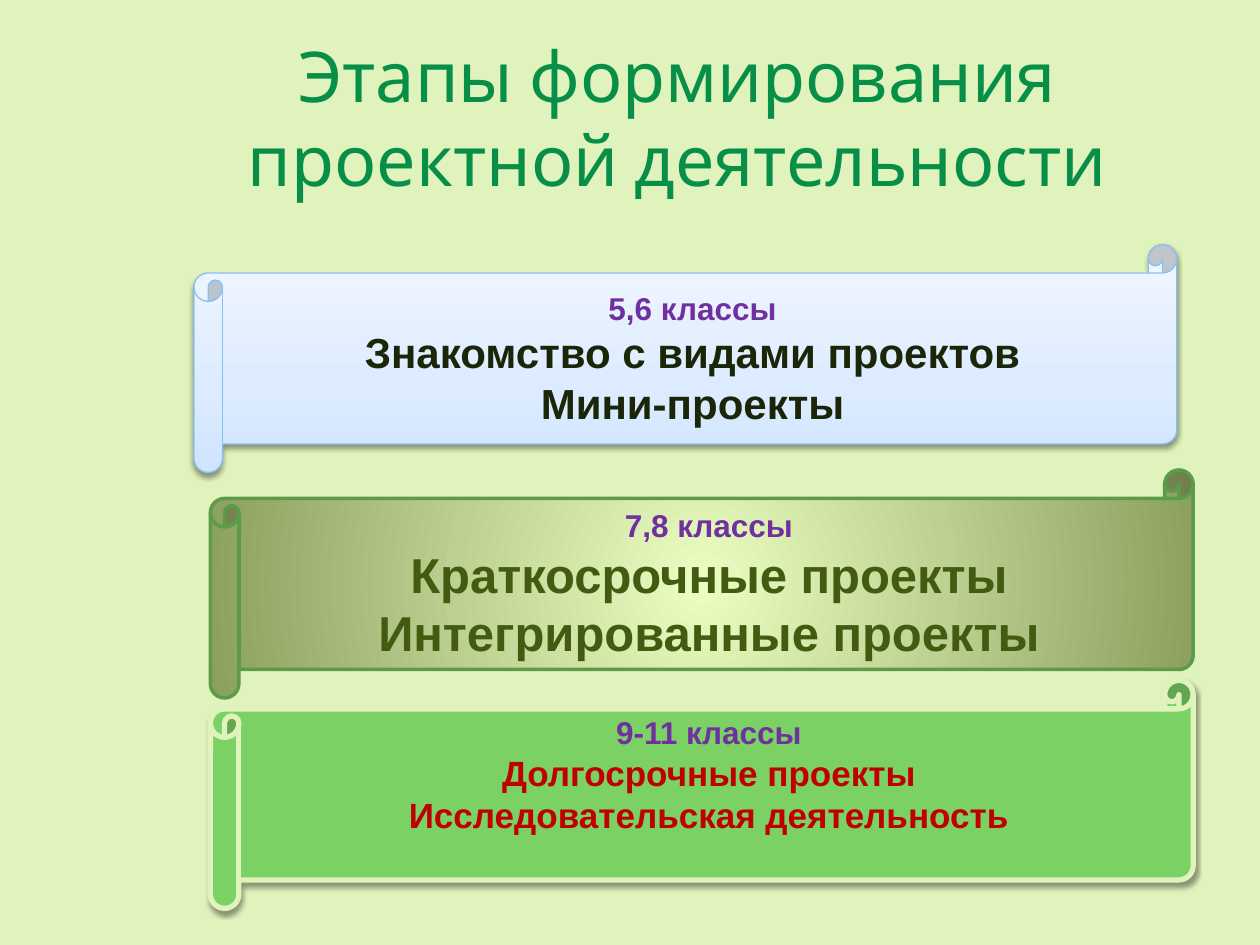
from lxml.etree import SubElement
from pptx import Presentation
from pptx.dml.color import RGBColor
from pptx.enum.shapes import MSO_SHAPE
from pptx.enum.text import MSO_ANCHOR, PP_ALIGN
from pptx.oxml.ns import qn
from pptx.util import Inches, Pt

COLORS = {
    "background": "E1F3BC",
    "title": "078F48",
    "grades": "7030A0",
    "intro": "1B2507",
    "intro_line": "88C0F6",
    "short": "435B10",
    "short_line": "5B9B49",
    "long": "C00000",
    "long_fill": "7BD163",
    "shadow": "000000",
}
BLUE_STOPS = [(0, "CEE4FF"), (35, "DCEBFF"), (100, "F1F7FF")]
OLIVE_STOPS = [(0, "EBFFC2"), (100, "8BA05F")]


class SlideBuilder:
    """Holds the style and the current slide."""

    def __init__(self, page):
        self.page = page
        self.body_font = "Arial"
        self.title_font = "Karla"

    def color(self, name):
        return RGBColor.from_string(COLORS[name])

    def background(self, name):
        fill = self.page.background.fill
        fill.solid()
        fill.fore_color.rgb = self.color(name)

    def set_text(self, paragraph, text, font, size, color, bold=False):
        paragraph.text = text
        paragraph.alignment = PP_ALIGN.CENTER
        for span in paragraph.runs:
            span.font.name = font
            span.font.size = Pt(size)
            span.font.bold = bold
            span.font.color.rgb = self.color(color)

    def title(self, text, left, top, width, height):
        box = self.page.shapes.add_textbox(
            Inches(left), Inches(top), Inches(width), Inches(height))
        frame = box.text_frame
        frame.word_wrap = True
        frame.vertical_anchor = MSO_ANCHOR.MIDDLE
        self.set_text(frame.paragraphs[0], text, self.title_font, 40, "title")

    def gradient(self, shape, stops, radial):
        """Fill with any number of stops, upwards or from the centre outwards."""
        shape.fill.gradient()
        gradient = shape._element.spPr.find(qn("a:gradFill"))
        for child in list(gradient):
            gradient.remove(child)
        stop_list = SubElement(gradient, qn("a:gsLst"))
        for position, color in stops:
            stop = SubElement(stop_list, qn("a:gs"), pos=str(position * 1000))
            SubElement(stop, qn("a:srgbClr"), val=color)
        if radial:
            circle = SubElement(gradient, qn("a:path"), {"path": "circle"})
            SubElement(circle, qn("a:fillToRect"),
                       {side: "50000" for side in "ltrb"})
        else:
            SubElement(gradient, qn("a:lin"), ang="16200000", scaled="0")

    def drop_shadow(self, shape):
        effects = shape._element.spPr.find(qn("a:effectLst"))
        shadow = SubElement(effects, qn("a:outerShdw"), blurRad=str(Pt(3.1)),
                            dist=str(Pt(1.6)), dir="5400000", rotWithShape="0")
        color = SubElement(shadow, qn("a:srgbClr"), val=COLORS["shadow"])
        SubElement(color, qn("a:alpha"), val="38000")

    def scroll(self, left, top, grades, lines, size, color, line, line_width,
               fill=None, stops=None, radial=False, shadow=True, bottom=0.05):
        shape = self.page.shapes.add_shape(
            MSO_SHAPE.HORIZONTAL_SCROLL,
            Inches(left), Inches(top), Inches(7.8), Inches(1.81))
        if stops:
            self.gradient(shape, stops, radial)
        else:
            shape.fill.solid()
            shape.fill.fore_color.rgb = self.color(fill)
        shape.line.color.rgb = self.color(line)
        shape.line.width = Pt(line_width)
        shape.shadow.inherit = False
        if shadow:
            self.drop_shadow(shape)

        frame = shape.text_frame
        frame.word_wrap = True
        frame.vertical_anchor = MSO_ANCHOR.MIDDLE
        frame.margin_bottom = Inches(bottom)
        self.set_text(frame.paragraphs[0], grades, self.body_font, 18, "grades", True)
        for text in lines:
            self.set_text(frame.add_paragraph(), text, self.body_font, size, color, True)


def main():
    deck = Presentation()
    deck.slide_width, deck.slide_height = Inches(10), Inches(7.5)
    builder = SlideBuilder(deck.slides.add_slide(deck.slide_layouts[6]))
    builder.background("background")
    builder.title("Этапы формирования проектной деятельности", 1.25, 0.3, 8.25, 1.25)
    builder.scroll(1.54, 1.94, "5,6 классы",
                   ["Знакомство с видами проектов", "Мини-проекты"],
                   24, "intro", "intro_line", 0.75, stops=BLUE_STOPS)
    builder.scroll(1.67, 3.73, "7,8 классы",
                   ["Краткосрочные проекты", "Интегрированные проекты"],
                   28, "short", "short_line", 2,
                   stops=OLIVE_STOPS, radial=True, shadow=False)
    builder.scroll(1.67, 5.4, "9-11 классы",
                   ["Долгосрочные проекты", "Исследовательская деятельность"],
                   20, "long", "background", 3, fill="long_fill", bottom=0.37)
    deck.save("out.pptx")


if __name__ == "__main__":
    main()
